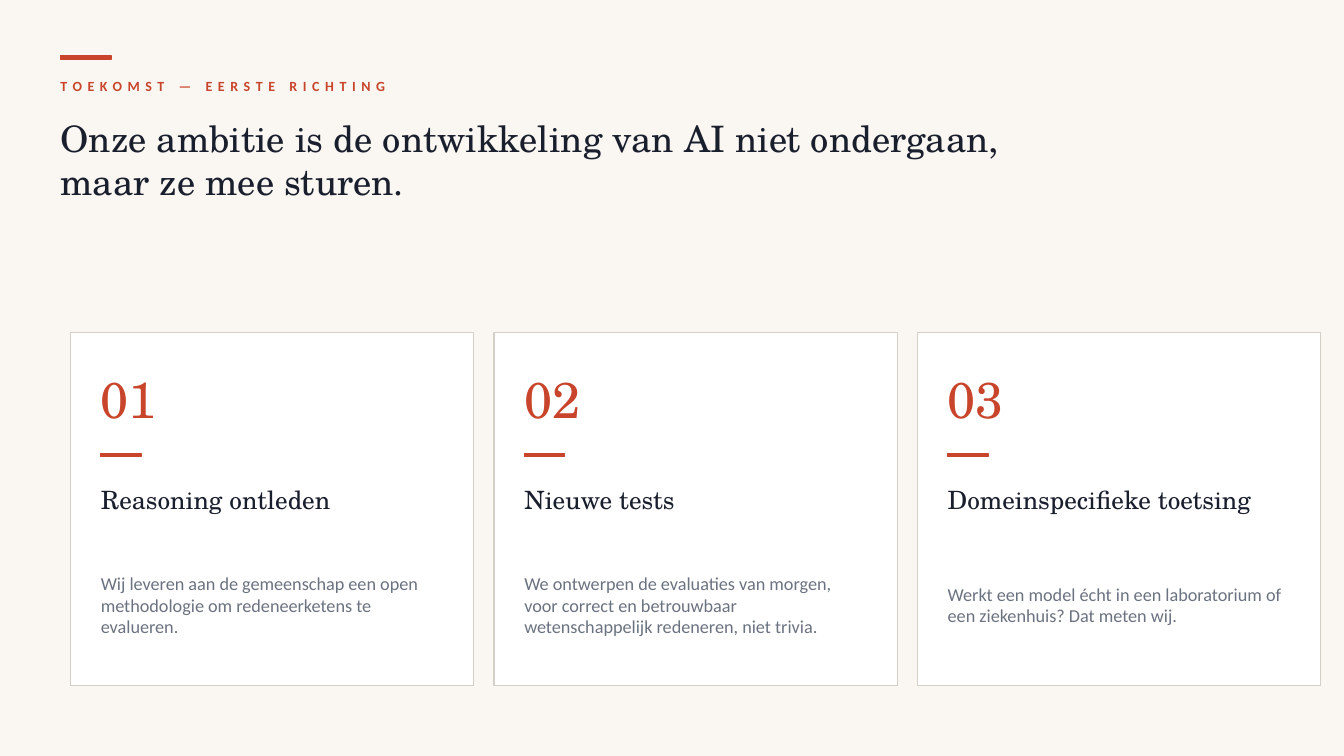
import pptx
import pptx.util
import pptx.dml.color
import pptx.enum.shapes
import pptx.enum.text

INK = {
    "paper": "FAF7F2",
    "card": "FFFFFF",
    "edge": "D4CFC7",
    "red": "C8442A",
    "dark": "1A1F2E",
    "gray": "6B7280",
}
SERIF = "TeX Gyre Schola"
SANS = "Calibri"
SCALE = 9144
ANCHOR = pptx.enum.text.MSO_ANCHOR


def px(*sizes):
    return [pptx.util.Emu(size * SCALE) for size in sizes]


def color(name):
    return pptx.dml.color.RGBColor.from_string(INK[name])


class Deck:
    def __init__(self, width, height):
        self.show = pptx.Presentation()
        self.show.slide_width, self.show.slide_height = px(width, height)
        self.slide = None

    def page(self):
        self.slide = self.show.slides.add_slide(self.show.slide_layouts[5])
        back = self.slide.background.fill
        back.solid()
        back.fore_color.rgb = color("paper")

    def rect(self, x, y, w, h, fill, line, weight):
        kind = pptx.enum.shapes.MSO_SHAPE.RECTANGLE
        shape = self.slide.shapes.add_shape(kind, *px(x, y, w, h))
        shape.shadow.inherit = False
        shape.fill.solid()
        shape.fill.fore_color.rgb = color(fill)
        shape.line.color.rgb = color(line)
        shape.line.width = pptx.util.Pt(weight)

    def rule(self, x, y, w, h):
        self.rect(x, y, w, h, "red", "red", 1)

    def style(self, shape, text, size, ink, face, anchor, bold=False, gap=0):
        frame = shape.text_frame
        frame.text = text
        frame.word_wrap = True
        frame.auto_size = pptx.enum.text.MSO_AUTO_SIZE.NONE
        frame.vertical_anchor = anchor
        frame.margin_left = frame.margin_right = 0
        frame.margin_top = frame.margin_bottom = 0
        for para in frame.paragraphs:
            para.alignment = pptx.enum.text.PP_ALIGN.LEFT
            for run in para.runs:
                run.font.name = face
                run.font.size = pptx.util.Pt(size)
                run.font.bold = bold
                run.font.color.rgb = color(ink)
                if gap:
                    run._r.get_or_add_rPr().set("spc", str(gap * 100))

    def title(self, x, y, w, h, text):
        shape = self.slide.shapes.title
        shape.left, shape.top, shape.width, shape.height = px(x, y, w, h)
        self.style(shape, text, 26, "dark", SERIF, ANCHOR.TOP)

    def text(self, x, y, w, h, text, size, ink, face, bold=False, gap=0):
        shape = self.slide.shapes.add_textbox(*px(x, y, w, h))
        self.style(shape, text, size, ink, face, ANCHOR.MIDDLE, bold, gap)

    def card(self, x, y, label, head, body):
        self.rect(x, y, 400, 350, "card", "edge", 0.75)
        left = x + 30
        self.text(left, y + 30, 200, 70, label, 36, "red", SERIF)
        self.rule(left, y + 120, 40, 3)
        self.text(left, y + 135, 340, 60, head, 18, "dark", SERIF)
        self.text(left, y + 200, 340, 140, body, 13, "gray", SANS)


CARDS = [
    ("Reasoning ontleden",
     "Wij leveren aan de gemeenschap een open methodologie om "
     "redeneerketens te evalueren."),
    ("Nieuwe tests",
     "We ontwerpen de evaluaties van morgen, voor correct en betrouwbaar "
     "wetenschappelijk redeneren, niet trivia."),
    ("Domeinspecifieke toetsing",
     "Werkt een model écht in een laboratorium of een ziekenhuis? "
     "Dat meten wij."),
]


def main():
    deck = Deck(1333, 750)
    deck.page()
    deck.rule(60, 55, 50, 4)
    deck.text(60, 70, 800, 30, "TOEKOMST — EERSTE RICHTING",
              10, "red", SANS, bold=True, gap=4)
    deck.title(60, 115, 1200, 180,
               "Onze ambitie is de ontwikkeling van AI niet ondergaan,\n"
               "maar ze mee sturen.")
    for i, (head, body) in enumerate(CARDS):
        deck.card(70 + 420 * i, 330, f"{i + 1:02}", head, body)
    deck.show.save("out.pptx")


if __name__ == "__main__":
    main()
